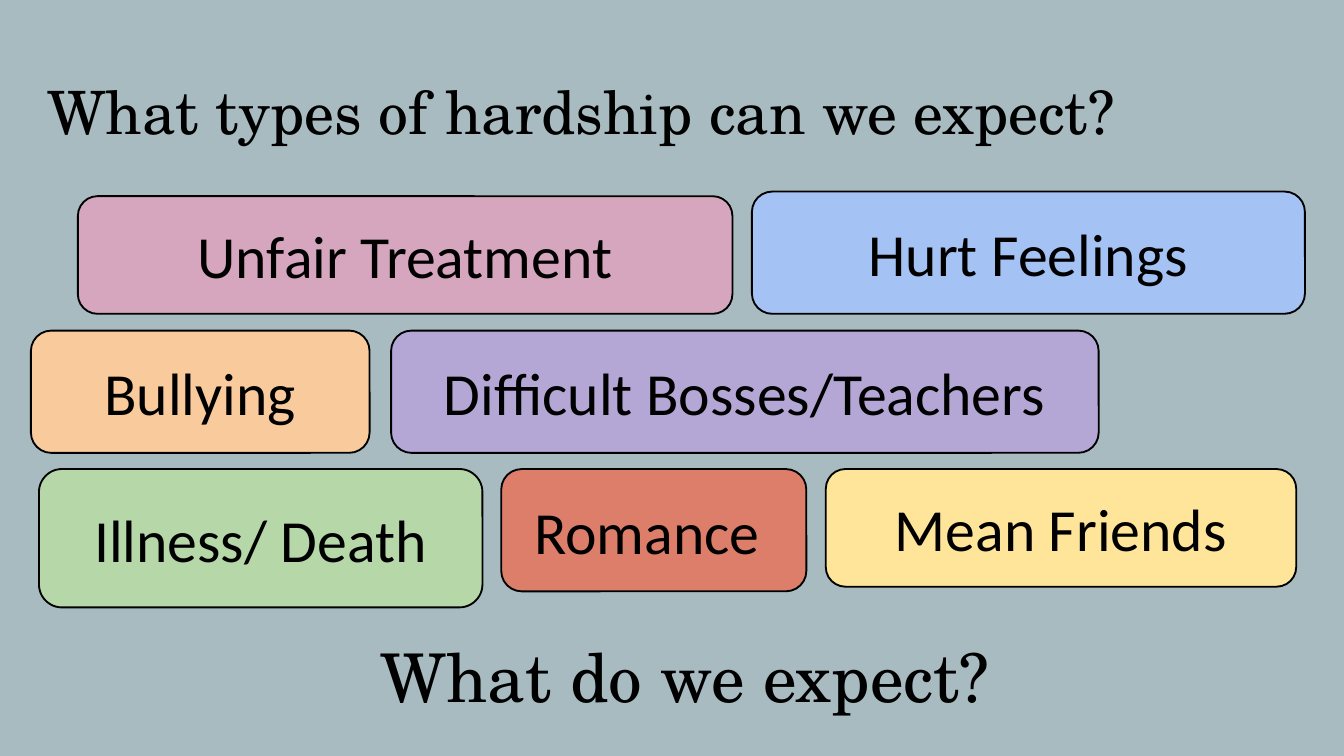
from dataclasses import dataclass

from pptx import Presentation
from pptx.dml.color import RGBColor
from pptx.enum.shapes import MSO_SHAPE
from pptx.enum.text import MSO_ANCHOR, MSO_AUTO_SIZE, PP_ALIGN
from pptx.util import Pt

ROUNDED = MSO_SHAPE.ROUNDED_RECTANGLE
TOP, MIDDLE = MSO_ANCHOR.TOP, MSO_ANCHOR.MIDDLE
LEFT, CENTER = PP_ALIGN.LEFT, PP_ALIGN.CENTER
NO_AUTOFIT = MSO_AUTO_SIZE.NONE

EMU_PER_PX = 4572  # 200 px to the inch
SLIDE_SIZE = (2000, 1125)
TITLE_ONLY = 5


@dataclass(frozen=True)
class Theme:
    background: str = "A7BBC0"
    ink: str = "000000"
    pink: str = "D5A6BD"
    blue: str = "A4C2F4"
    orange: str = "F9CB9C"
    purple: str = "B4A7D6"
    green: str = "B6D7A8"
    red: str = "DD7E6B"
    yellow: str = "FFE599"
    heading_font: str = "TeX Gyre Schola"
    card_font: str = "Calibri"
    text_size: int = 32
    question_size: int = 36
    line_width: int = 1


THEME = Theme()

# Each card: text, fill, left, top, width, height
CARDS = [
    ("Unfair Treatment", THEME.pink, 116, 292, 974, 175),
    ("Hurt Feelings", THEME.blue, 1119, 285, 823, 182),
    ("Bullying", THEME.orange, 46, 492, 504, 182),
    ("Difficult Bosses/Teachers", THEME.purple, 582, 492, 1053, 182),
    ("Illness/ Death", THEME.green, 58, 698, 660, 206),
    ("Romance ", THEME.red, 746, 698, 454, 182),
    ("Mean Friends", THEME.yellow, 1229, 698, 700, 175),
]


def px(value):
    return value * EMU_PER_PX


def color(value):
    return RGBColor.from_string(value)


def set_values(target, values):
    for name, value in values.items():
        setattr(target, name, value)


def place(shape, left, top, width, height):
    set_values(shape, {"left": px(left), "top": px(top),
                       "width": px(width), "height": px(height)})


def write(shape, text, font, size, alignment, anchor, vertical_inset):
    frame = shape.text_frame
    frame.text = text
    set_values(frame, {
        "word_wrap": True, "auto_size": NO_AUTOFIT, "vertical_anchor": anchor,
        "margin_left": px(20), "margin_right": px(20),
        "margin_top": px(vertical_inset), "margin_bottom": px(vertical_inset),
    })
    paragraph = frame.paragraphs[0]
    set_values(paragraph, {"alignment": alignment, "line_spacing": 1.0,
                           "space_before": Pt(0)})
    run_font = paragraph.runs[0].font
    set_values(run_font, {"name": font, "size": Pt(size)})
    run_font.color.rgb = color(THEME.ink)


def write_heading(shape, text, size, alignment):
    write(shape, text, THEME.heading_font, size, alignment, TOP, 20)


def add_title(slide, text):
    title = slide.shapes.title
    place(title, 50, 92, 1900, 176)
    write_heading(title, text, THEME.text_size, LEFT)


def add_card(slide, text, fill, *bounds):
    card = slide.shapes.add_shape(ROUNDED, *map(px, bounds))
    card.shadow.inherit = False
    card.fill.solid()
    card.fill.fore_color.rgb = color(fill)
    card.line.color.rgb = color(THEME.ink)
    card.line.width = Pt(THEME.line_width)
    write(card, text, THEME.card_font, THEME.text_size, CENTER, MIDDLE, 10)


def add_question(slide, text):
    question = slide.shapes.add_textbox(px(70), px(926), px(1900), px(176))
    write_heading(question, text, THEME.question_size, CENTER)


def main():
    presentation = Presentation()
    presentation.slide_width, presentation.slide_height = map(px, SLIDE_SIZE)
    slide = presentation.slides.add_slide(presentation.slide_layouts[TITLE_ONLY])
    slide.background.fill.solid()
    slide.background.fill.fore_color.rgb = color(THEME.background)

    add_title(slide, "What types of hardship can we expect?")
    for card in CARDS:
        add_card(slide, *card)
    add_question(slide, "What do we expect?")
    presentation.save("out.pptx")


if __name__ == "__main__":
    main()
